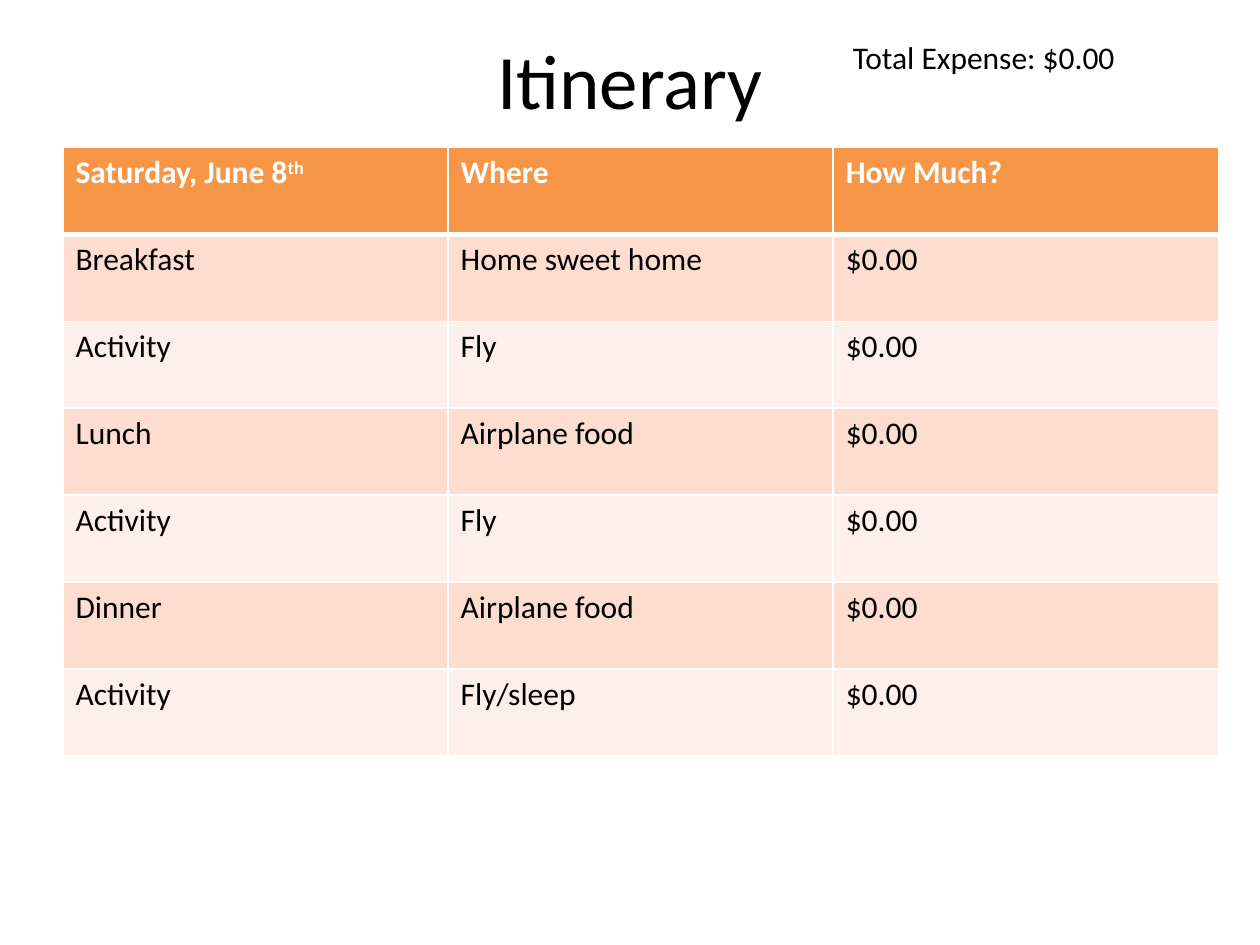
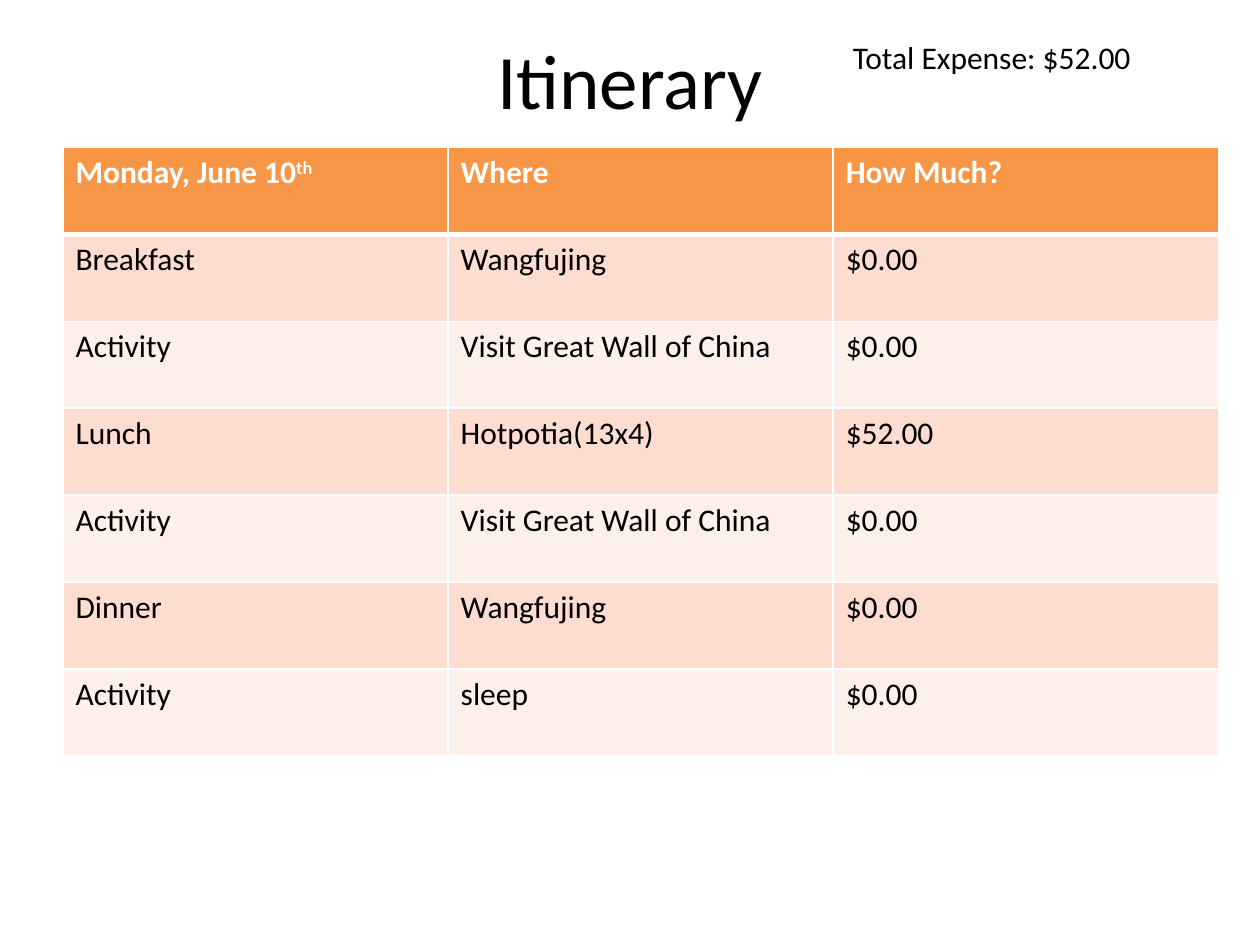
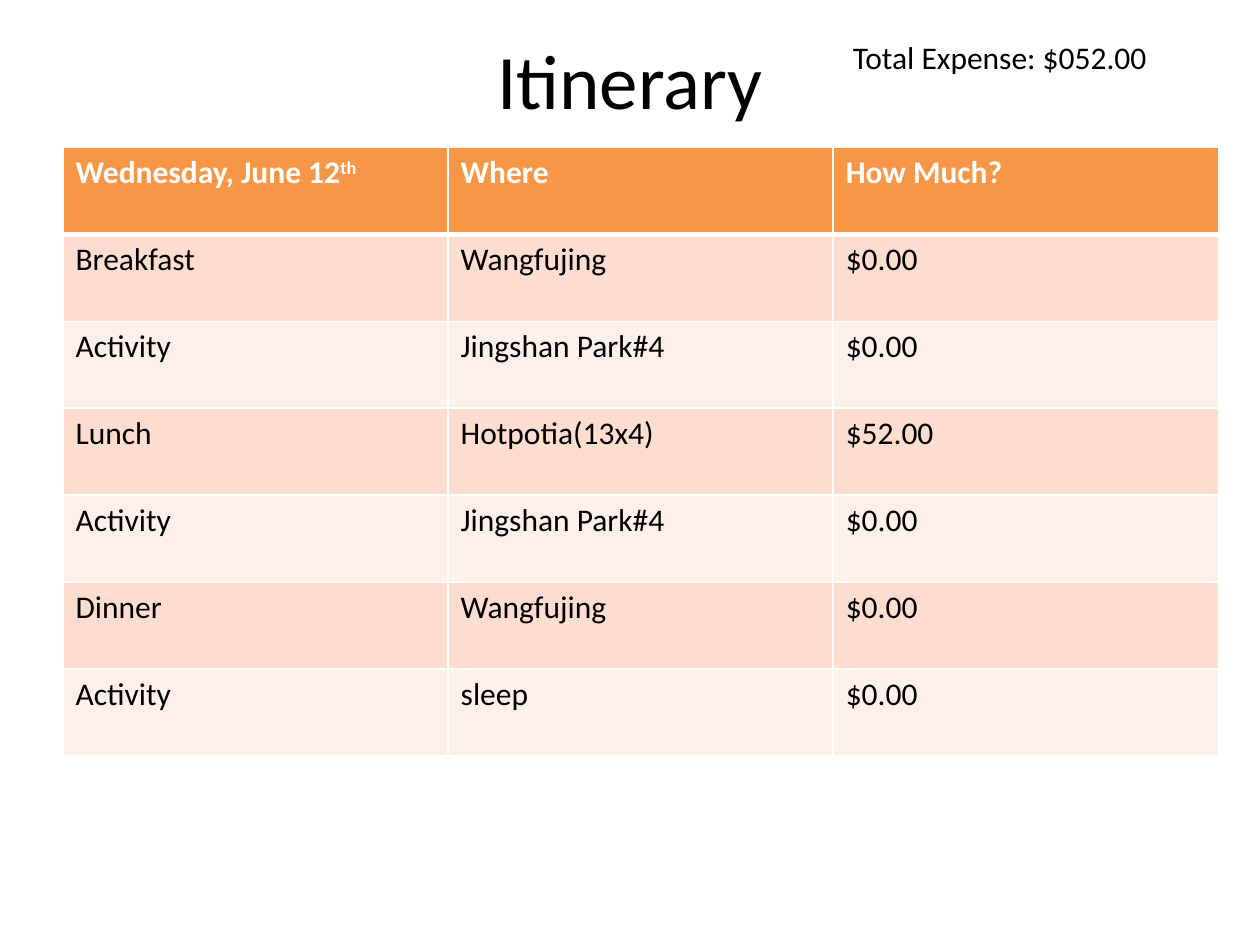
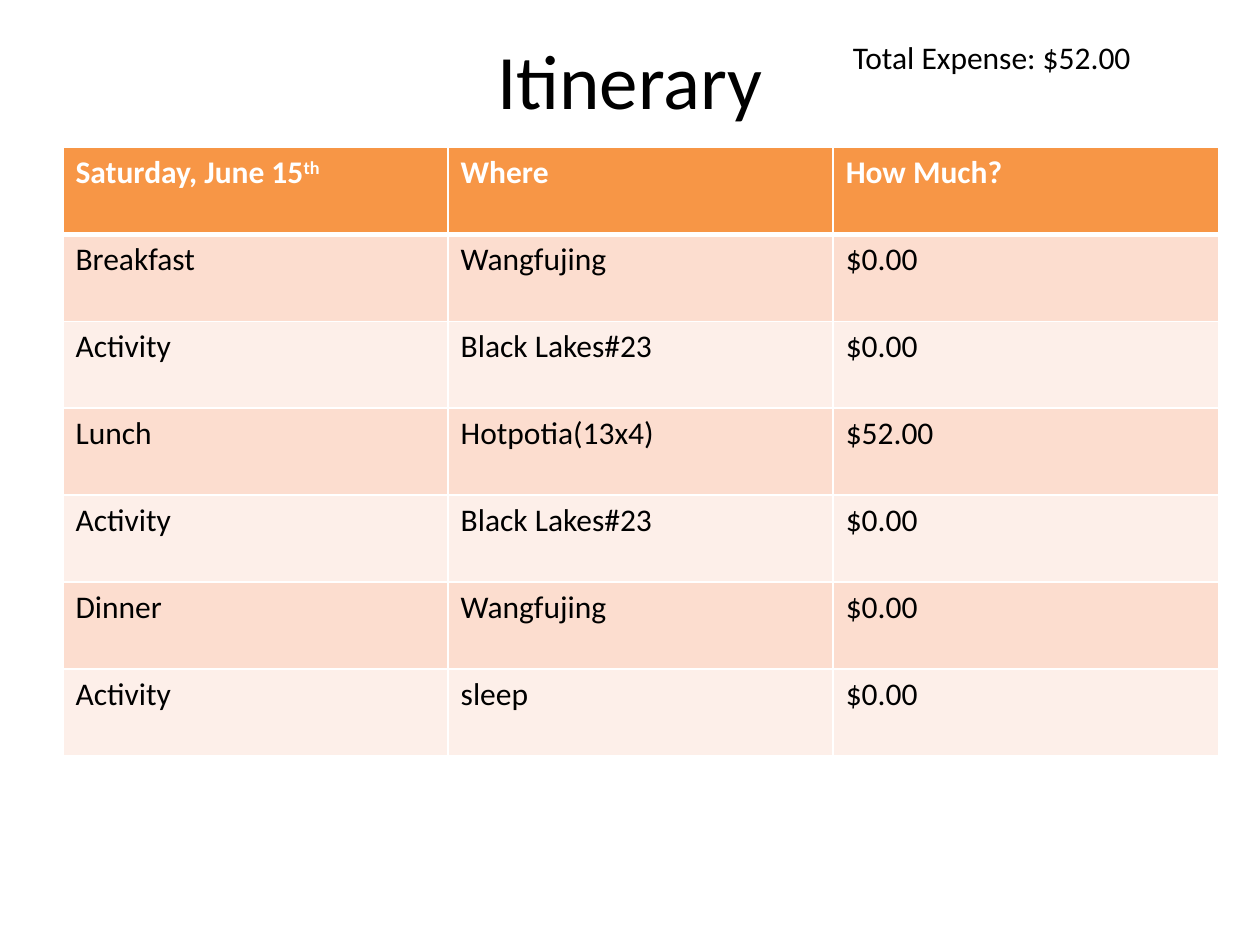
from lxml.etree import SubElement
from pptx import Presentation
from pptx.dml.color import RGBColor
from pptx.enum.text import MSO_ANCHOR, MSO_AUTO_SIZE, PP_ALIGN
from pptx.oxml.ns import qn
from pptx.util import Inches, Pt

FONT = "Calibri"
BLACK = RGBColor(0x00, 0x00, 0x00)
WHITE = RGBColor(0xFF, 0xFF, 0xFF)
ORANGE = RGBColor(0xF7, 0x96, 0x46)
BAND_DARK = RGBColor(0xFC, 0xDD, 0xCF)
BAND_LIGHT = RGBColor(0xFD, 0xEF, 0xE9)

SLOTS = ["Breakfast", "Activity", "Lunch", "Activity", "Dinner", "Activity"]
FREE = "$0.00"
LUNCH = "Hotpotia(13x4)"

DAYS = [
    ("Saturday, June 8", "$0.00", FREE,
     ["Home sweet home", "Fly", "Airplane food", "Fly", "Airplane food", "Fly/sleep"]),
]
for date, total, sight in [
    ("Monday, June 10", "$52.00", "Visit Great Wall of China"),
    ("Wednesday, June 12", "$052.00", "Jingshan Park#4"),
    ("Saturday, June 15", "$52.00", "Black Lakes#23"),
]:
    DAYS.append((date, total, "$52.00",
                 ["Wangfujing", sight, LUNCH, sight, "Wangfujing", "sleep"]))


def write(tf, text, size=18, color=BLACK, bold=False, align=PP_ALIGN.LEFT, sup=""):
    p = tf.paragraphs[0]
    p.alignment = align
    for part, baseline in [(text, "0"), (sup, "30000")]:
        if part:
            r = p.add_run()
            r.text = part
            r.font.name = FONT
            r.font.size = Pt(size)
            r.font.bold = bold
            r.font.color.rgb = color
            r._r.get_or_add_rPr().set("baseline", baseline)


def style_cell(cell, fill, top, bottom):
    tcPr = cell._tc.get_or_add_tcPr()
    for tag, width in [("a:lnL", 1), ("a:lnR", 1), ("a:lnT", top), ("a:lnB", bottom)]:
        ln = SubElement(tcPr, qn(tag), w=str(Pt(width)))
        solid = SubElement(ln, qn("a:solidFill"))
        SubElement(solid, qn("a:srgbClr"), val=str(WHITE))
    cell.fill.solid()
    cell.fill.fore_color.rgb = fill


prs = Presentation()
prs.slide_width = Inches(10)
prs.slide_height = Inches(7.5)

for date, total, lunch_cost, places in DAYS:
    s = prs.slides.add_slide(prs.slide_layouts[6])

    title = s.shapes.add_textbox(Inches(0.5), Inches(0), Inches(9), Inches(1.25))
    tf = title.text_frame
    tf.word_wrap = True
    tf.vertical_anchor = MSO_ANCHOR.MIDDLE
    write(tf, "Itinerary", size=44, align=PP_ALIGN.CENTER)

    expense = s.shapes.add_textbox(Inches(6.67), Inches(0.25), Inches(3.08), Inches(0.4))
    tf = expense.text_frame
    tf.word_wrap = True
    tf.auto_size = MSO_AUTO_SIZE.SHAPE_TO_FIT_TEXT
    write(tf, f"Total Expense: {total}")

    costs = [lunch_cost if slot == "Lunch" else FREE for slot in SLOTS]
    rows = [(date, "Where", "How Much?"), *zip(SLOTS, places, costs)]
    table = s.shapes.add_table(len(rows), 3, Inches(0.5), Inches(1.17),
                               Inches(9.17), Inches(4.84)).table
    for row in table.rows:
        row.height = Inches(0.69)

    for i, row in enumerate(rows):
        header = i == 0
        fill = ORANGE if header else BAND_DARK if i % 2 else BAND_LIGHT
        for j, text in enumerate(row):
            cell = table.cell(i, j)
            style_cell(cell, fill, top=3 if i == 1 else 1, bottom=3 if header else 1)
            write(cell.text_frame, text, color=WHITE if header else BLACK,
                  bold=header, sup="th" if header and j == 0 else "")

prs.save("out.pptx")
